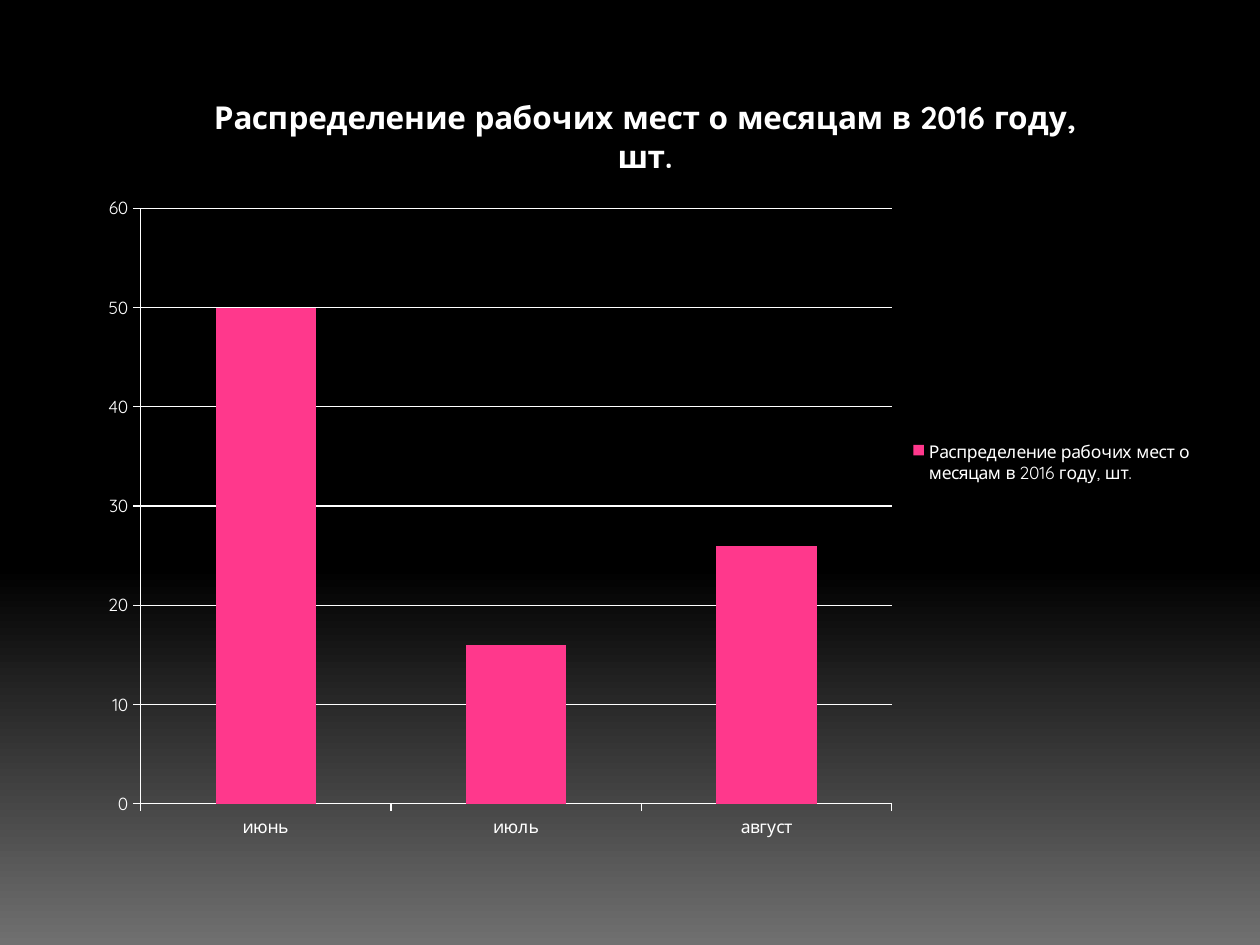
from copy import deepcopy
from dataclasses import dataclass

from pptx import Presentation
from pptx.chart.data import CategoryChartData
from pptx.dml.color import RGBColor
from pptx.enum.chart import XL_CHART_TYPE, XL_LEGEND_POSITION, XL_TICK_MARK
from pptx.oxml import parse_xml
from pptx.oxml.ns import nsdecls, qn
from pptx.util import Inches, Pt


@dataclass(frozen=True)
class Theme:
    """Colours, font and type sizes of the deck."""
    font: str = "Quicksand"
    text: RGBColor = RGBColor(0xFF, 0xFF, 0xFF)
    bar: RGBColor = RGBColor(0xFF, 0x38, 0x8C)
    dark: RGBColor = RGBColor(0x00, 0x00, 0x00)
    grey: RGBColor = RGBColor(0x70, 0x70, 0x70)
    title_size: Pt = Pt(18)
    label_size: Pt = Pt(10)
    line_width: Pt = Pt(0.75)


THEME = Theme()
TITLE = "Распределение рабочих мест о месяцам в 2016 году, шт."
JOBS_BY_MONTH = {"июнь": 50, "июль": 16, "август": 26}


def paint_background(page):
    """Fill the page with black that fades to grey at the bottom."""
    fill = page.background.fill
    fill.gradient()
    fill.gradient_angle = 270
    first_stop = next(page.element.iter(qn("a:gs")))
    first_stop.addnext(deepcopy(first_stop))
    stops = ((0, THEME.dark), (0.6, THEME.dark), (1, THEME.grey))
    for stop, (position, color) in zip(fill.gradient_stops, stops):
        stop.position = position
        stop.color.rgb = color


def style_font(font, size, bold=False):
    """Apply the theme font in the text colour."""
    font.name = THEME.font
    font.size = size
    font.bold = bold
    font.color.rgb = THEME.text


def style_line(line):
    """Draw an axis or grid line in the text colour."""
    line.color.rgb = THEME.text
    line.width = THEME.line_width


def place_plot(chart, **fractions):
    """Fix the inner plot area as fractions of the chart box."""
    sizes = "".join(f'<c:{key} val="{value}"/>' for key, value in fractions.items())
    layout = parse_xml(
        f'<c:layout {nsdecls("c")}><c:manualLayout><c:layoutTarget val="inner"/>'
        f'<c:xMode val="edge"/><c:yMode val="edge"/>{sizes}</c:manualLayout></c:layout>'
    )
    plot_area = next(chart.element.iter(qn("c:plotArea")))
    for old_layout in plot_area.findall(qn("c:layout")):
        plot_area.remove(old_layout)
    plot_area.insert(0, layout)


def add_jobs_chart(page, left, top, width, height):
    """Place the column chart of jobs by month in the given box."""
    data = CategoryChartData()
    data.categories = JOBS_BY_MONTH.keys()
    data.add_series(TITLE, JOBS_BY_MONTH.values())
    chart = page.shapes.add_chart(
        XL_CHART_TYPE.COLUMN_CLUSTERED, left, top, width, height, data
    ).chart
    style_font(chart.font, THEME.label_size)

    chart.has_title = True
    para = chart.chart_title.text_frame.paragraphs[0]
    para.add_run().text = TITLE
    style_font(para.font, THEME.title_size, bold=True)
    chart.chart_title.include_in_layout = False

    chart.has_legend = True
    chart.legend.position = XL_LEGEND_POSITION.RIGHT
    chart.legend.include_in_layout = False

    for axis in (chart.category_axis, chart.value_axis):
        axis.major_tick_mark = XL_TICK_MARK.OUTSIDE
        style_line(axis.format.line)
    chart.value_axis.minimum_scale = 0
    chart.value_axis.maximum_scale = 60
    chart.value_axis.major_unit = 10
    style_line(chart.value_axis.major_gridlines.format.line)

    plot = chart.plots[0]
    plot.vary_by_categories = False
    plot.gap_width = 150
    bars = plot.series[0].format.fill
    bars.solid()
    bars.fore_color.rgb = THEME.bar
    place_plot(chart, x=0.05, y=0.18, w=0.67, h=0.75)


def main():
    """Build the deck and save it."""
    deck = Presentation()
    deck.slide_width, deck.slide_height = Inches(10), Inches(7.5)
    page = deck.slides.add_slide(deck.slide_layouts.get_by_name("Blank"))
    paint_background(page)
    add_jobs_chart(page, Inches(0.67), Inches(0.52), Inches(8.9), Inches(6.3))
    deck.save("out.pptx")


if __name__ == "__main__":
    main()
